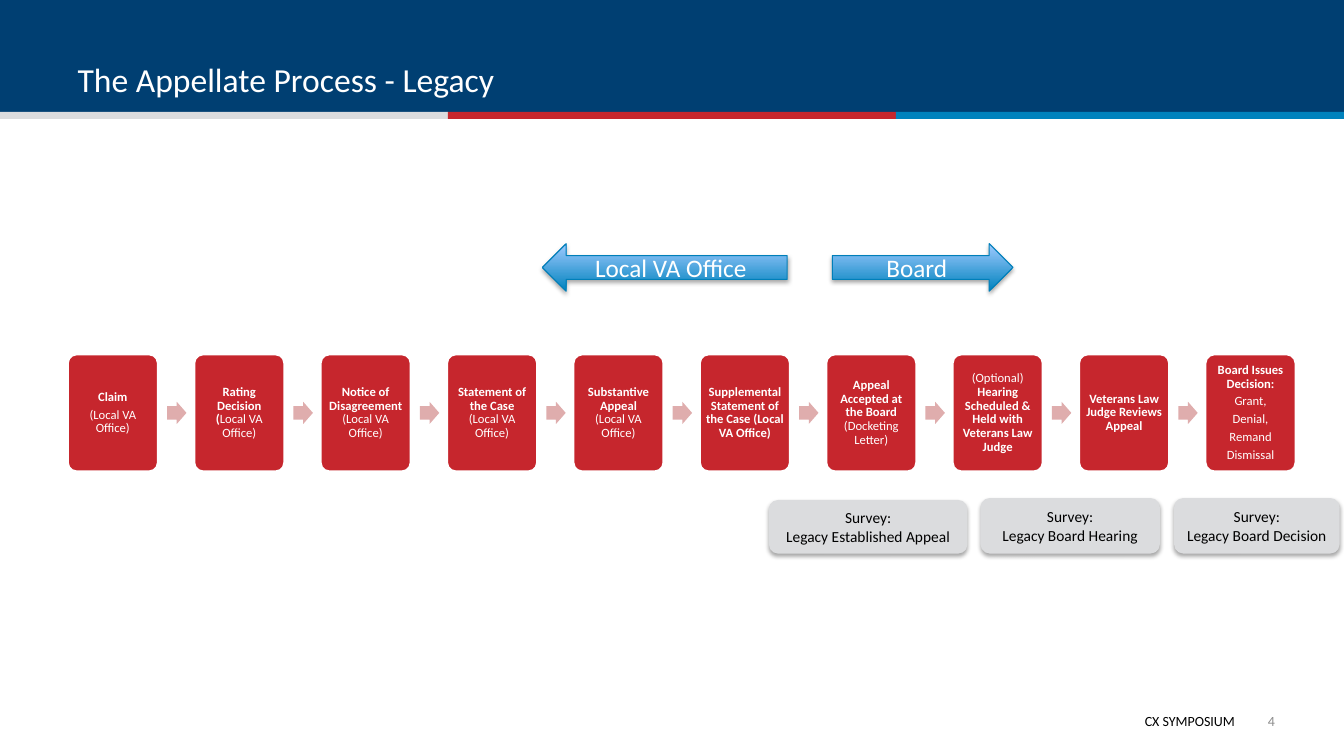
import pptx
import pptx.dml.color
import pptx.enum.shapes
import pptx.enum.text
import pptx.oxml
import pptx.oxml.ns
import pptx.util
from pptx.util import Cm

SHAPE = pptx.enum.shapes.MSO_SHAPE
ALIGN = pptx.enum.text.PP_ALIGN
ANCHOR = pptx.enum.text.MSO_ANCHOR
FONT = "Calibri"
COLORS = {
    "navy": "003F72", "gray": "DBDCDE", "red": "C6262D", "blue": "0082BD",
    "sky": "9FCAFF", "edge": "007FB9", "pink": "DFADAD", "number": "8C8C8C",
    "white": "FFFFFF", "black": "000000",
}

# Each step is a list of paragraphs, each paragraph a list of (text, bold) runs;
# "\n" stands for a line break.
LOCAL = ("(Local VA Office)", False)
STEPS = [
    [[("Claim", True)], [LOCAL]],
    [[("Rating Decision", True), ("\n", False), ("(", True), ("Local VA Office)", False)]],
    [[("Notice of Disagreement ", True), LOCAL]],
    [[("Statement of the Case", True), ("\n", False), LOCAL]],
    [[("Substantive Appeal", True), ("\n", False), LOCAL]],
    [[("Supplemental Statement of the Case (Local VA Office)", True)]],
    [[("Appeal Accepted at the Board ", True), ("(Docketing Letter)", False)]],
    [[("(Optional) ", False), ("Hearing Scheduled & Held with Veterans Law Judge", True)]],
    [[("Veterans Law Judge Reviews Appeal", True)]],
    [[("Board Issues Decision:", True)], [("Grant,", False)], [("Denial,", False)],
     [("Remand", False)], [("Dismissal", False)]],
]
SURVEYS = [
    ("Legacy Established Appeal", 19.38, 12.6, 5.0, 1.35),
    ("Legacy Board Hearing", 24.71, 12.55, 4.52, 1.4),
    ("Legacy Board Decision", 29.59, 12.55, 4.17, 1.4),
]
FIRST_LEFT, LAST_LEFT, STEP_TOP = 1.7, 30.37, 8.92
STEP_PITCH = (LAST_LEFT - FIRST_LEFT) / (len(STEPS) - 1)
STEP_W, STEP_H = 2.29, 2.97


def rgb(name):
    return pptx.dml.color.RGBColor.from_string(COLORS[name])


def put_text(tf, paragraphs, size, color, align=ALIGN.CENTER, anchor=ANCHOR.MIDDLE,
             inset=None, line_spacing=None, space_after=0):
    """Fill a text frame with paragraphs, each a list of (text, bold) runs."""
    tf.word_wrap = True
    tf.auto_size = pptx.enum.text.MSO_AUTO_SIZE.NONE
    tf.vertical_anchor = anchor
    if inset is not None:
        tf.margin_left = tf.margin_right = tf.margin_top = tf.margin_bottom = Cm(inset)
    for i, runs in enumerate(paragraphs):
        p = tf.add_paragraph() if i else tf.paragraphs[0]
        p.alignment = align
        p.line_spacing = line_spacing
        p.space_before = pptx.util.Pt(0)
        p.space_after = pptx.util.Pt(space_after)
        for text, bold in runs:
            if text == "\n":
                p.add_line_break()
                continue
            r = p.add_run()
            r.text = text
            r.font.name = FONT
            r.font.size = pptx.util.Pt(size)
            r.font.bold = bold
            r.font.color.rgb = rgb(color)


def add_box(s, kind, left, top, width, height, fill, line=None, line_width=1):
    sp = s.shapes.add_shape(kind, Cm(left), Cm(top), Cm(width), Cm(height))
    sp.shadow.inherit = False
    sp.fill.solid()
    sp.fill.fore_color.rgb = rgb(fill)
    if line:
        sp.line.color.rgb = rgb(line)
        sp.line.width = pptx.util.Pt(line_width)
    else:
        sp.line.fill.background()
    return sp


def add_label(s, text, left, top, width, height, **text_format):
    sp = s.shapes.add_textbox(Cm(left), Cm(top), Cm(width), Cm(height))
    put_text(sp.text_frame, [[(text, False)]], **text_format)


def drop_shadow(sp):
    effects = sp.element.spPr.find(pptx.oxml.ns.qn("a:effectLst"))
    effects.append(pptx.oxml.parse_xml(
        f'<a:outerShdw {pptx.oxml.ns.nsdecls("a")} blurRad="40000" dist="23000" '
        'dir="5400000" rotWithShape="0"><a:srgbClr val="000000">'
        '<a:alpha val="35000"/></a:srgbClr></a:outerShdw>'))


def add_header(s, title):
    add_box(s, SHAPE.RECTANGLE, 0, 0, 33.87, 2.9, "navy")
    for i, color in enumerate(("gray", "red", "blue")):
        add_box(s, SHAPE.RECTANGLE, i * 11.29, 2.82, 11.29, 0.18, color)
    sp = s.shapes.title
    sp.element.getparent().append(sp.element)  # bring in front of the band
    sp.left, sp.top, sp.width, sp.height = Cm(1.7), Cm(0.36), Cm(30.48), Cm(2.26)
    put_text(sp.text_frame, [[(title, False)]], 24, "white",
             align=ALIGN.LEFT, anchor=ANCHOR.BOTTOM)


def add_process(s):
    for i, paragraphs in enumerate(STEPS):
        left = FIRST_LEFT + i * STEP_PITCH
        sp = add_box(s, SHAPE.ROUNDED_RECTANGLE, left, STEP_TOP, STEP_W, STEP_H,
                     "red", line="white", line_width=2)
        sp.adjustments[0] = 0.1
        put_text(sp.text_frame, paragraphs, 9, "white", inset=0.08,
                 line_spacing=0.9, space_after=3)
        if i < len(STEPS) - 1:
            arrow = add_box(s, SHAPE.RIGHT_ARROW, left + 2.51,
                            STEP_TOP + (STEP_H - 0.56) / 2, 0.49, 0.56, "pink")
            arrow.adjustments[0] = 0.6


def add_office_arrow(s, kind, text, left, width):
    sp = add_box(s, kind, left, 6.14, width, 1.2, "blue", line="edge", line_width=0.75)
    sp.fill.gradient()
    sp.fill.gradient_angle = 90
    for stop, color, position in zip(sp.fill.gradient_stops, ("blue", "sky"), (0, 1)):
        stop.color.rgb = rgb(color)
        stop.position = position
    drop_shadow(sp)
    put_text(sp.text_frame, [[(text, False)]], 18, "white")


def add_survey(s, name, left, top, width, height):
    sp = add_box(s, SHAPE.ROUNDED_RECTANGLE, left, top, width, height, "gray")
    drop_shadow(sp)
    put_text(sp.text_frame, [[("Survey:", False)], [(name, False)]], 11, "black")


def main():
    prs = pptx.Presentation()
    prs.slide_width, prs.slide_height = Cm(33.87), Cm(19.05)
    s = prs.slides.add_slide(prs.slide_layouts[5])
    add_header(s, "The Appellate Process - Legacy")
    add_label(s, "CX SYMPOSIUM", 14, 17.83, 17.37, 0.69, size=10, color="black",
              align=ALIGN.RIGHT, anchor=ANCHOR.TOP)
    add_label(s, "4", 31.22, 17.65, 0.91, 1.02, size=10, color="number",
              align=ALIGN.RIGHT, inset=0)
    add_process(s)
    add_office_arrow(s, SHAPE.LEFT_ARROW, "Local VA Office", 13.67, 6.17)
    add_office_arrow(s, SHAPE.RIGHT_ARROW, "Board", 20.98, 4.55)
    for survey in SURVEYS:
        add_survey(s, *survey)
    prs.save("out.pptx")


if __name__ == "__main__":
    main()
